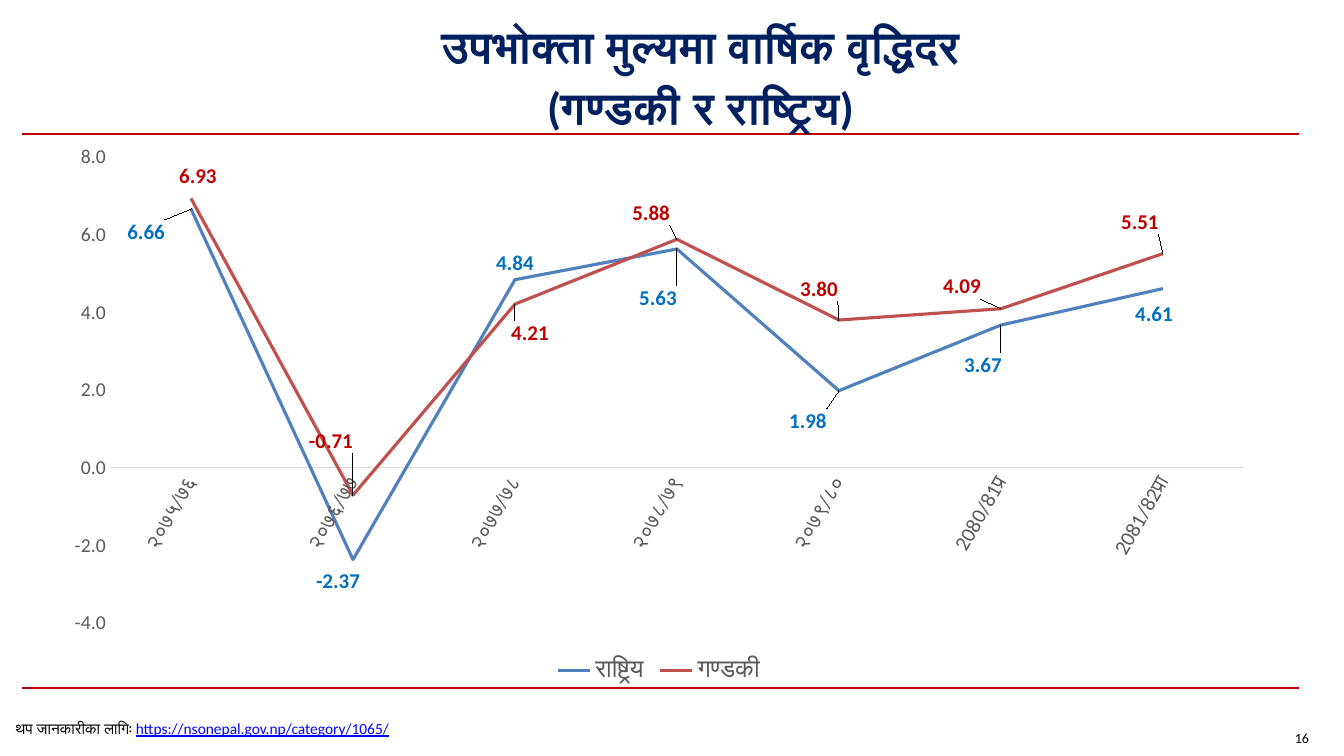
import pptx
import pptx.chart.data
import pptx.dml.color
import pptx.enum.chart
import pptx.enum.shapes
import pptx.enum.text
import pptx.oxml
import pptx.oxml.ns
import pptx.util

EMU_PER_PX = 914400 / 100.8
FONT = "Calibri"
GREY = "595959"
RED = "C00000"
CHART_BOX = (50, 134, 1218, 554)
PLOT_BOX = (60, 23, 1134, 466)
YEARS = ["२०७५/७६", "२०७६/७७", "२०७७/७८", "२०७८/७९", "२०७९/८०", "2080/81प्र", "2081/82प्रा"]
POSITION = pptx.enum.chart.XL_LABEL_POSITION
SERIES = [
    {"name": "राष्ट्रिय", "values": [6.66, -2.37, 4.84, 5.63, 1.98, 3.67, 4.61],
     "line": "4F81BD", "label": "0070C0", "position": POSITION.ABOVE,
     "shifts": {0: (-45, 40), 1: (-15, 38), 3: (-19, 66), 4: (-31, 47), 5: (-18, 57), 6: (-9, 42)}},
    {"name": "गण्डकी", "values": [6.93, -0.71, 4.21, 5.88, 3.8, 4.09, 5.51],
     "line": "C0504D", "label": RED, "position": POSITION.BELOW,
     "shifts": {0: (7, -39), 1: (-22, -71), 2: (15, 12), 3: (-26, -43), 4: (-20, -48),
                5: (-39, -39), 6: (-23, -48)}},
]


def px(n):
    """Turn pixels into EMU."""
    return pptx.util.Emu(round(n * EMU_PER_PX))


def color(hex_code):
    """Turn a hex string into a colour."""
    return pptx.dml.color.RGBColor.from_string(hex_code)


def style_font(font, size, hex_code, bold=False):
    """Set face, size, colour and weight of a font."""
    font.name = FONT
    font.size = pptx.util.Pt(size)
    font.bold = bold
    font.color.rgb = color(hex_code)


def add_text(s, box, align=None, anchor=None):
    """Add a wrapping text box and return its first paragraph."""
    tf = s.shapes.add_textbox(*map(px, box)).text_frame
    tf.word_wrap = True
    tf.vertical_anchor = anchor
    p = tf.paragraphs[0]
    p.alignment = align
    return p


def add_run(p, text, size, hex_code="000000", bold=False):
    """Add one styled run to a paragraph."""
    r = p.add_run()
    r.text = text
    style_font(r.font, size, hex_code, bold)
    return r


def add_rule(s, y):
    """Add a full-width red rule."""
    sp = s.shapes.add_connector(pptx.enum.shapes.MSO_CONNECTOR.STRAIGHT,
                                px(22), px(y), px(1299), px(y))
    sp.line.color.rgb = color(RED)
    sp.line.width = pptx.util.Pt(1.5)
    sp._element.spPr.append(pptx.oxml.parse_xml(
        f'<a:effectLst {pptx.oxml.ns.nsdecls("a")}/>'))


def manual_layout(**values):
    """Build a chart layout element from named values."""
    children = "".join(f'<c:{name} val="{value}"/>' for name, value in values.items())
    return pptx.oxml.parse_xml(
        f'<c:layout {pptx.oxml.ns.nsdecls("c")}><c:manualLayout>{children}</c:manualLayout></c:layout>')


def place_plot(chart):
    """Fix the inner plot area within the chart."""
    plot_area = chart._chartSpace.chart.plotArea
    for old in plot_area.xpath("c:layout"):
        plot_area.remove(old)
    x, y, w, h = PLOT_BOX
    width, height = CHART_BOX[2:]
    plot_area.insert(0, manual_layout(
        layoutTarget="inner", xMode="edge", yMode="edge",
        x=round(x / width, 4), y=round(y / height, 4),
        w=round(w / width, 4), h=round(h / height, 4)))


def style_series(series, row):
    """Colour a series and shift its value labels."""
    series.smooth = False
    series.format.line.color.rgb = color(row["line"])
    series.format.line.width = pptx.util.Pt(2.25)
    labels = series.data_labels
    labels.show_value = True
    labels.number_format = "0.00"
    labels.number_format_is_linked = False
    labels.position = row["position"]
    style_font(labels.font, 15, row["label"], True)
    for i, (dx, dy) in row["shifts"].items():
        label = series.points[i].data_label
        style_font(label.font, 15, row["label"], True)
        label.position = row["position"]
        element = series._element.xpath(f'c:dLbls/c:dLbl[c:idx/@val="{i}"]')[0]
        element.insert(1, manual_layout(x=round(dx / CHART_BOX[2], 4),
                                        y=round(dy / CHART_BOX[3], 4)))


def style_axes(chart):
    """Set the scale, ticks, lines and fonts of both axes."""
    years, rates = chart.category_axis, chart.value_axis
    for axis, size in ((years, 15), (rates, 14)):
        axis.has_major_gridlines = False
        axis.major_tick_mark = pptx.enum.chart.XL_TICK_MARK.NONE
        axis.minor_tick_mark = pptx.enum.chart.XL_TICK_MARK.NONE
        style_font(axis.tick_labels.font, size, GREY)
    years.format.line.color.rgb = color("D9D9D9")
    years.format.line.width = pptx.util.Pt(0.75)
    years._element.xpath("c:txPr/a:bodyPr")[0].set("rot", "-3600000")
    rates.format.line.fill.background()
    rates.minimum_scale, rates.maximum_scale, rates.major_unit = -4, 8, 2
    rates.tick_labels.number_format = "0.0"
    rates.tick_labels.number_format_is_linked = False


def add_line_chart(s):
    """Add the chart of yearly price growth."""
    data = pptx.chart.data.CategoryChartData(number_format="0.00")
    data.categories = YEARS
    for row in SERIES:
        data.add_series(row["name"], row["values"])
    chart = s.shapes.add_chart(pptx.enum.chart.XL_CHART_TYPE.LINE,
                               *map(px, CHART_BOX), data).chart
    style_font(chart.font, 10, "000000")
    chart.has_title = False
    chart.has_legend = True
    chart.legend.position = pptx.enum.chart.XL_LEGEND_POSITION.BOTTOM
    chart.legend.include_in_layout = False
    style_font(chart.legend.font, 18, GREY)
    chart.plots[0].vary_by_categories = False
    place_plot(chart)
    style_axes(chart)
    for series, row in zip(chart.plots[0].series, SERIES):
        style_series(series, row)


def main():
    """Build the slide and save it."""
    prs = pptx.Presentation()
    prs.slide_width, prs.slide_height = px(1344), px(756)
    s = prs.slides.add_slide(prs.slide_layouts[6])
    for y in (134, 688):
        add_rule(s, y)
    p = add_text(s, (269, 25, 863, 95), pptx.enum.text.PP_ALIGN.CENTER,
                 pptx.enum.text.MSO_ANCHOR.MIDDLE)
    p.line_spacing = 1.14
    add_run(p, "उपभोक्ता मुल्यमा वार्षिक वृद्धिदर", 32, "002060", True)
    p.add_line_break()
    add_run(p, "(गण्डकी र राष्ट्रिय)", 32, "002060", True)
    add_run(add_text(s, (1285, 725, 52, 26)), "16", 10)
    add_line_chart(s)
    p = add_text(s, (6, 714, 622, 33))
    add_run(p, "थप जानकारीका लागिः ", 11)
    r = add_run(p, "https://nsonepal.gov.np/category/1065/", 11, "0000FF")
    r.font.underline = True
    prs.save("out.pptx")


if __name__ == "__main__":
    main()
